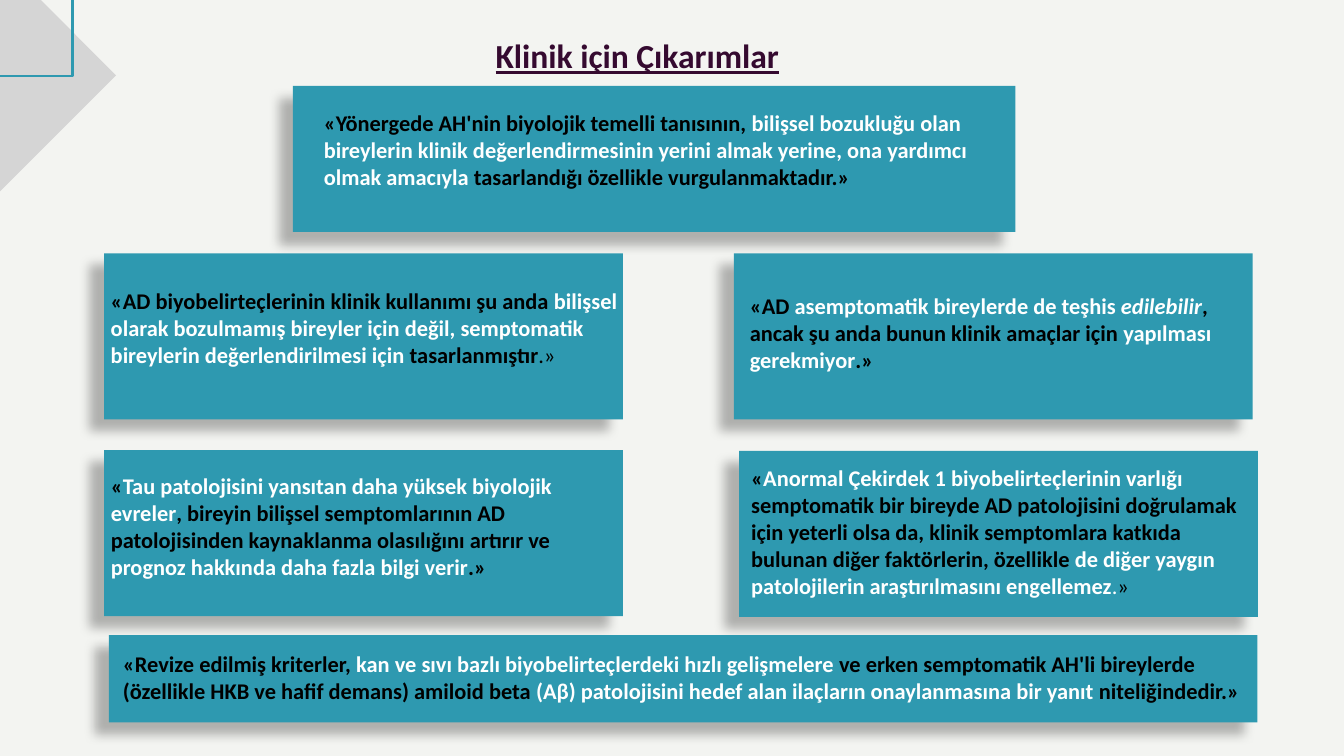
"""Build a slide of clinical implications as quoted panels under a title."""
from lxml.etree import SubElement
from pptx import Presentation
from pptx.dml.color import RGBColor
from pptx.enum.shapes import MSO_SHAPE
from pptx.enum.text import MSO_ANCHOR, PP_ALIGN
from pptx.oxml.ns import qn
from pptx.util import Inches, Pt

WIDE, HIGH = 20, 11.25
FONT = "Calibri"
HUES = {"back": "F3F4F1", "teal": "2E99B0", "plum": "350A30",
        "gray": "D5D5D5", "dark": "000000", "light": "FFFFFF"}
TITLE = "Klinik için Çıkarımlar"

LEFT, RIGHT = 1.55, 10.92
UPPER, LOWER = 3.77, 6.7
CELL = (7.72, 2.47)

PANELS = [
    {"box": (4.36, 1.28, 10.75, 2.17), "text": (4.72, 1.58, 9.94, 1.58), "runs": [
        ("dark", "«Yönergede AH'nin biyolojik temelli tanısının, "),
        ("light", "bilişsel bozukluğu olan bireylerin klinik değerlendirmesinin "
                  "yerini almak yerine, ona yardımcı olmak amacıyla"),
        ("dark", " tasarlandığı özellikle vurgulanmaktadır.»")]},
    {"box": (LEFT, UPPER, *CELL), "text": (LEFT, 4.22, 7.83, 1.31), "runs": [
        ("dark", "«AD biyobelirteçlerinin klinik kullanımı şu anda "),
        ("light", "bilişsel olarak bozulmamış bireyler için değil, semptomatik "
                  "bireylerin değerlendirilmesi için "),
        ("dark", "tasarlanmıştır"),
        ("dark", ".»", "thin")]},
    {"box": (RIGHT, UPPER, *CELL), "text": (11.06, 4.3, 7.43, 1.31), "runs": [
        ("dark", "«AD "),
        ("light", "asemptomatik bireylerde de teşhis "),
        ("light", "edilebilir", "slant"),
        ("dark", ", ancak şu anda bunun klinik amaçlar için "),
        ("light", "yapılması gerekmiyor"),
        ("dark", ".»")]},
    {"box": (LEFT, LOWER, *CELL), "text": (LEFT, 6.98, 7.25, 1.72), "runs": [
        ("dark", "«"),
        ("light", "Tau patolojisini yansıtan daha yüksek biyolojik evreler"),
        ("dark", ", bireyin bilişsel semptomlarının AD patolojisinden "
                 "kaynaklanma olasılığını artırır ve "),
        ("light", "prognoz hakkında daha fazla bilgi verir"),
        ("dark", ".»")]},
    {"box": (11, 6.71, *CELL), "text": (11.08, 6.86, 7.67, 2.12), "runs": [
        ("dark", "«"),
        ("light", "Anormal Çekirdek 1 biyobelirteçlerinin varlığı "),
        ("dark", "semptomatik bir bireyde AD patolojisini doğrulamak için yeterli "
                 "olsa da, klinik semptomlara katkıda bulunan diğer faktörlerin, özellikle "),
        ("light", "de diğer yaygın patolojilerin araştırılmasını engellemez"),
        ("light", ".", "thin"),
        ("dark", "»", "thin")]},
    {"box": (1.62, 9.45, 17.09, 1.3), "text": (1.73, 9.63, 16.91, 0.91), "runs": [
        ("dark", "«Revize edilmiş kriterler, "),
        ("light", "kan ve sıvı bazlı biyobelirteçlerdeki hızlı gelişmelere "),
        ("dark", "ve erken semptomatik AH'li bireylerde (özellikle HKB ve hafif "
                 "demans) amiloid beta "),
        ("light", "(Aβ) patolojisini hedef alan ilaçların onaylanmasına bir yanıt "),
        ("dark", "niteliğindedir.»")]},
]


def hue(name):
    return RGBColor.from_string(HUES[name])


def block(slide, box, fill=None, line=None):
    shape = slide.shapes.add_shape(MSO_SHAPE.RECTANGLE, *map(Inches, box))
    shape.shadow.inherit = False
    if fill:
        shape.fill.solid()
        shape.fill.fore_color.rgb = hue(fill)
    else:
        shape.fill.background()
    if line:
        shape.line.color.rgb = hue(line)
        shape.line.width = Pt(3)
    else:
        shape.line.fill.background()
    return shape


def shade(shape):
    glow = shape.element.spPr.find(qn("a:effectLst"))
    cast = SubElement(glow, qn("a:outerShdw"), blurRad=str(Pt(11.8)),
                      dist=str(Pt(19.7)), dir=str(141 * 60000),
                      algn="tr", rotWithShape="0")
    tint = SubElement(cast, qn("a:srgbClr"), val=HUES["dark"])
    SubElement(tint, qn("a:alpha"), val="28000")


def write(slide, box, runs, size):
    frame = slide.shapes.add_textbox(*map(Inches, box)).text_frame
    frame.word_wrap = True
    para = frame.paragraphs[0]
    para.font.name = FONT
    para.font.size = Pt(size)
    para.font.bold = True
    for tone, text, *style in runs:
        run = para.add_run()
        run.text = text
        run.font.color.rgb = hue(tone)
        if "thin" in style:
            run.font.bold = False
        if "slant" in style:
            run.font.italic = True
    return frame


def main():
    deck = Presentation()
    deck.slide_width, deck.slide_height = Inches(WIDE), Inches(HIGH)
    slide = deck.slides.add_slide(deck.slide_layouts[6])
    slide.background.fill.solid()
    slide.background.fill.fore_color.rgb = hue("back")

    for panel in PANELS:
        shade(block(slide, panel["box"], fill="teal"))
    for panel in PANELS:
        write(slide, panel["text"], panel["runs"], 24)

    head = write(slide, (2.94, 0.2, 13.09, 1.25), [("plum", TITLE)], 36)
    head.vertical_anchor = MSO_ANCHOR.MIDDLE
    head.paragraphs[0].alignment = PP_ALIGN.CENTER
    head.paragraphs[0].font.underline = True

    block(slide, (-2.16, -0.49, 3.22, 3.22), fill="gray").rotation = 315
    block(slide, (-1.76, -1.71, 2.84, 2.84), line="teal")
    deck.save("out.pptx")


if __name__ == "__main__":
    main()
